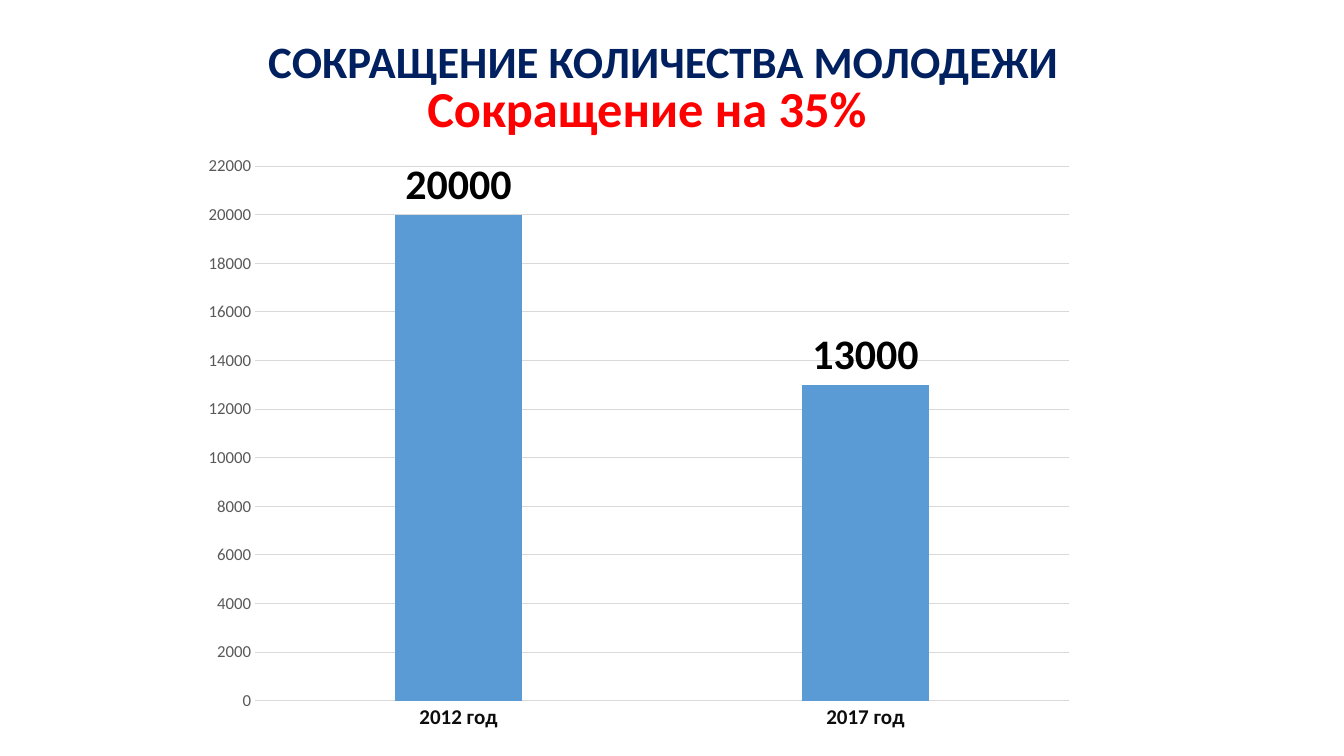
from pptx import Presentation
from pptx.chart.data import CategoryChartData
from pptx.dml.color import RGBColor
from pptx.enum.chart import XL_CHART_TYPE, XL_LABEL_POSITION, XL_TICK_MARK
from pptx.enum.text import MSO_ANCHOR, MSO_AUTO_SIZE, PP_ALIGN
from pptx.util import Inches, Pt

COLORS = {
    "navy": "002060",
    "red": "FF0000",
    "bar": "5B9BD5",
    "grid": "D9D9D9",
    "scale": "595959",
    "category": "0D0D0D",
    "label": "000000",
}


class YouthSlide:
    font_name = "Calibri"

    def __init__(self, deck):
        self.deck = deck
        self.page = deck.slides.add_slide(deck.slide_layouts[5])

    def area(self, left, top, width, height):
        across, down = self.deck.slide_width, self.deck.slide_height
        return [int(share * side / 100) for share, side in
                zip((left, top, width, height), (across, down, across, down))]

    def style_font(self, font, size, color, bold=False):
        font.name = self.font_name
        font.size = Pt(size)
        font.bold = bold
        font.color.rgb = RGBColor.from_string(COLORS[color])

    def style_line(self, line):
        line.color.rgb = RGBColor.from_string(COLORS["grid"])
        line.width = Pt(0.75)

    def fill_text(self, box, text, size, color):
        frame = box.text_frame
        frame.text = text
        frame.word_wrap = True
        frame.auto_size = MSO_AUTO_SIZE.NONE
        frame.vertical_anchor = MSO_ANCHOR.TOP
        para = frame.paragraphs[0]
        para.alignment = PP_ALIGN.LEFT
        for span in para.runs:
            self.style_font(span.font, size, color, bold=True)

    def title(self, text, place, size, color):
        box = self.page.shapes.title
        box.left, box.top, box.width, box.height = self.area(*place)
        self.fill_text(box, text, size, color)

    def text(self, text, place, size, color):
        box = self.page.shapes.add_textbox(*self.area(*place))
        self.fill_text(box, text, size, color)

    def columns(self, values, place, step, maximum):
        data = CategoryChartData()
        data.categories = list(values)
        data.add_series("Series 1", list(values.values()))
        chart = self.page.shapes.add_chart(
            XL_CHART_TYPE.COLUMN_CLUSTERED, *self.area(*place), data).chart
        chart.has_legend = False
        chart.has_title = False
        self.style_font(chart.font, 10, "label")

        plot = chart.plots[0]
        plot.vary_by_categories = False
        plot.gap_width = 219
        plot.overlap = -27
        fill = plot.series[0].format.fill
        fill.solid()
        fill.fore_color.rgb = RGBColor.from_string(COLORS["bar"])
        plot.has_data_labels = True
        labels = plot.data_labels
        labels.show_value = True
        labels.position = XL_LABEL_POSITION.OUTSIDE_END
        self.style_font(labels.font, 30, "label", bold=True)

        for axis in (chart.category_axis, chart.value_axis):
            axis.major_tick_mark = axis.minor_tick_mark = XL_TICK_MARK.NONE
        self.style_font(chart.category_axis.tick_labels.font, 15, "category", bold=True)
        self.style_line(chart.category_axis.format.line)

        scale = chart.value_axis
        scale.minimum_scale = 0
        scale.maximum_scale = maximum
        scale.major_unit = step
        scale.format.line.fill.background()
        scale.has_major_gridlines = True
        self.style_line(scale.major_gridlines.format.line)
        self.style_font(scale.tick_labels.font, 12, "scale")


def main():
    deck = Presentation()
    deck.slide_width = Inches(13.33)
    deck.slide_height = Inches(7.5)
    slide = YouthSlide(deck)
    slide.columns({"2012 год": 20000, "2017 год": 13000},
                  (14.18, 19.07, 66.69, 79.07), step=2000, maximum=22000)
    slide.text("Сокращение на 35%", (31.06, 9.6, 40.06, 9.47), 36, "red")
    slide.title("СОКРАЩЕНИЕ КОЛИЧЕСТВА МОЛОДЕЖИ",
                (19.2, 3.73, 71.79, 12.53), 32, "navy")
    deck.save("out.pptx")


if __name__ == "__main__":
    main()
